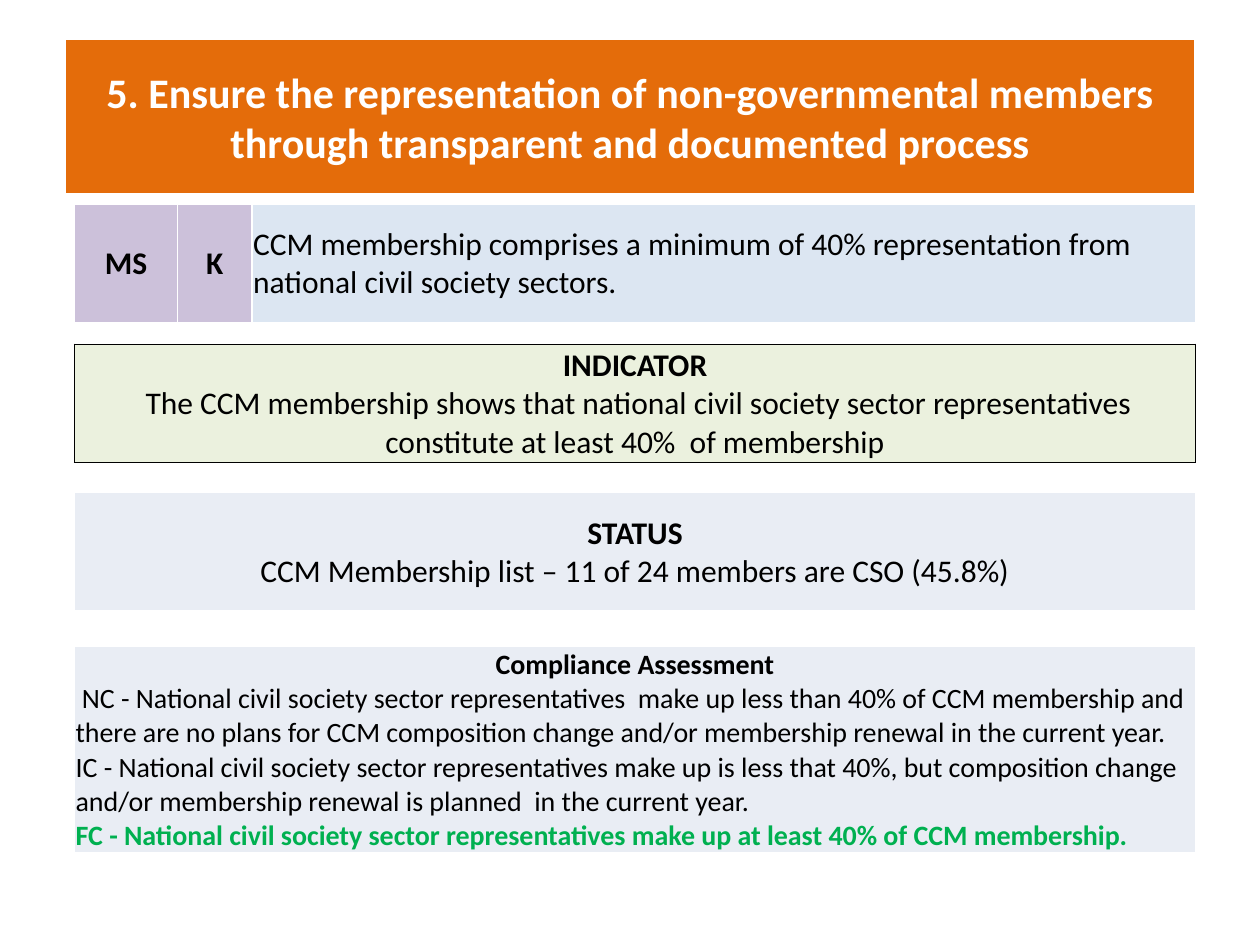
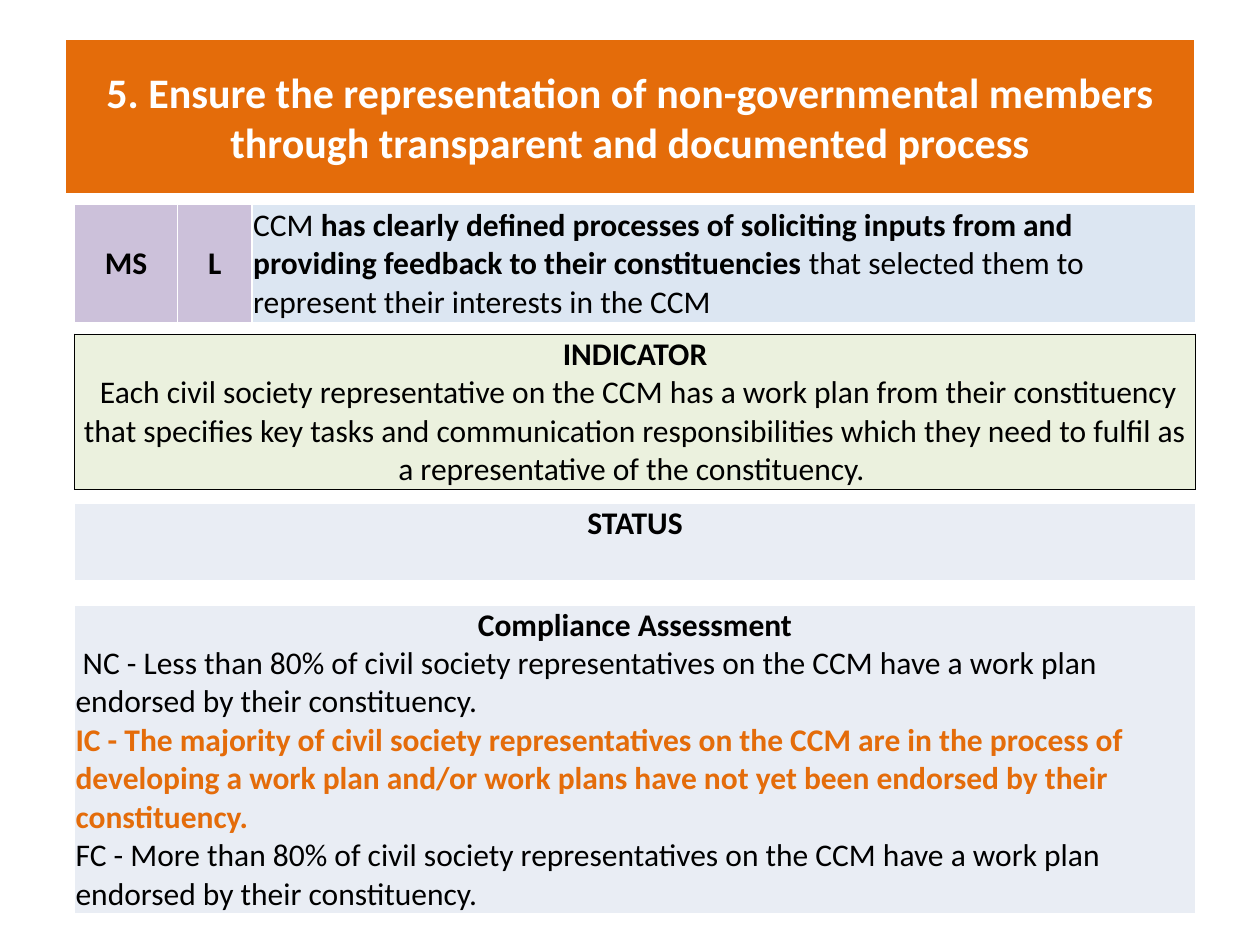
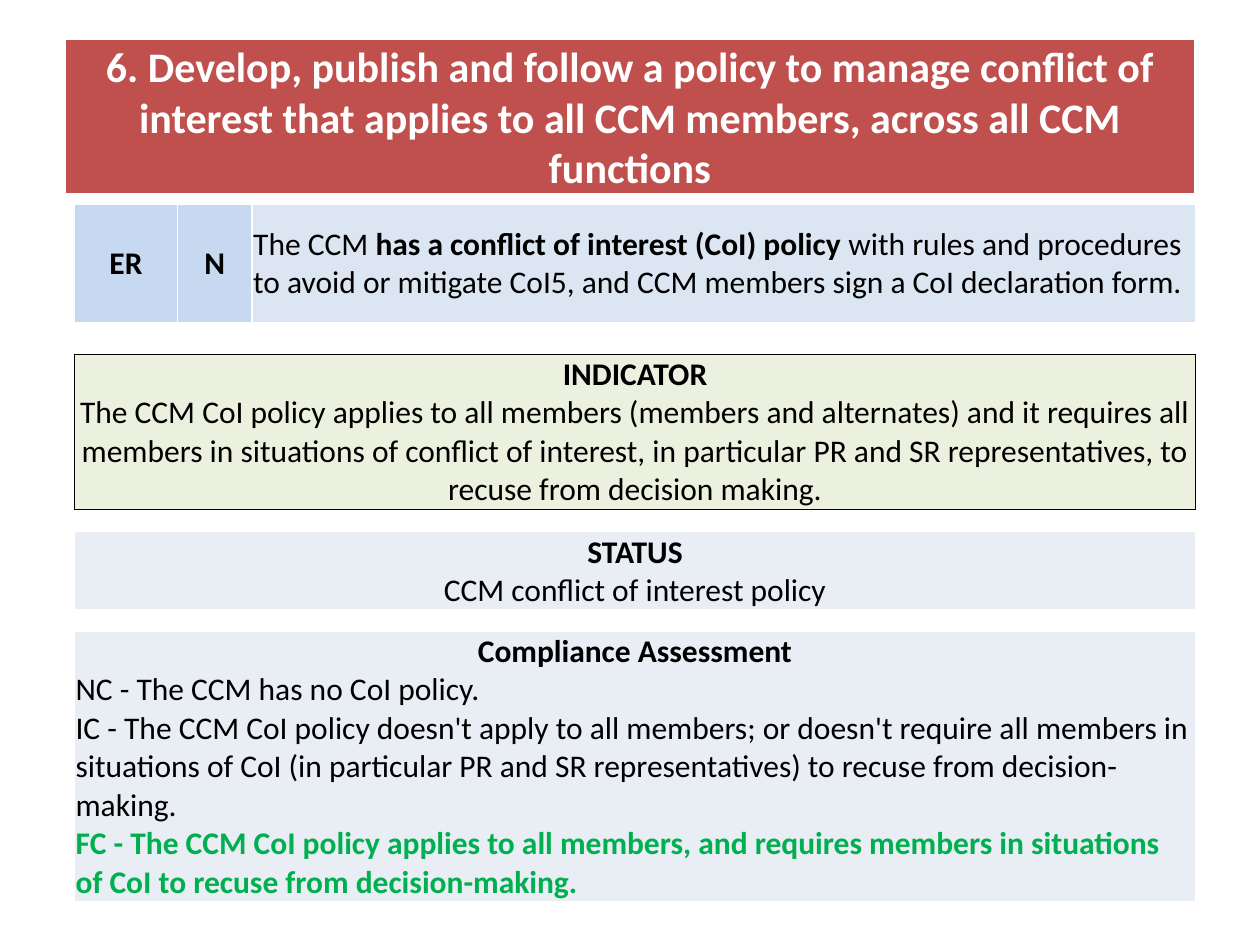
import dataclasses

import lxml.etree
import pptx
import pptx.dml.color
import pptx.enum.text
import pptx.oxml.ns
import pptx.util

ALIGN = pptx.enum.text.PP_ALIGN
ANCHOR = pptx.enum.text.MSO_ANCHOR
SCALE = 9144
LEFT, WIDTH = 59, 890
TAG_TOP, TAG_HIGH = 162, 94
TAG_COLS = (82, 59, WIDTH - 82 - 59)


@dataclasses.dataclass(frozen=True)
class Theme:
    font: str = "Calibri"
    head: int = 24
    body: int = 18
    small: int = 16
    white: str = "FFFFFF"
    black: str = "000000"
    orange: str = "E46C0A"
    red: str = "C0504D"
    green: str = "00B050"
    mauve: str = "CCC1DA"
    sky: str = "C6D9F1"
    pale: str = "DCE6F2"
    lime: str = "EBF1DE"
    mist: str = "E9EDF4"


THEME = Theme()


def px(count):
    return pptx.util.Emu(count * SCALE)


def rgb(code):
    return pptx.dml.color.RGBColor.from_string(code)


def write(para, text, size=THEME.body, color=THEME.black, bold=False, align=None):
    if align is not None:
        para.alignment = align
    run = para.add_run()
    run.text = text
    run.font.name = THEME.font
    run.font.size = pptx.util.Pt(size)
    run.font.bold = bold
    run.font.color.rgb = rgb(color)


class Deck:
    def __init__(self, theme):
        self.theme = theme
        self.file = pptx.Presentation()
        self.file.slide_width = px(1000)
        self.file.slide_height = px(750)
        self.slide = None

    def start(self, text, fill):
        layout = self.file.slide_layouts.get_by_name("Title Only")
        self.slide = self.file.slides.add_slide(layout)
        self.title(text, fill)

    def title(self, text, fill):
        box = self.slide.shapes.title
        box.left, box.top, box.width, box.height = map(px, (51, 30, 898, 125))
        box.fill.solid()
        box.fill.fore_color.rgb = rgb(fill)
        box.line.color.rgb = rgb(self.theme.white)
        box.line.width = pptx.util.Pt(2)
        frame = box.text_frame
        frame.word_wrap = True
        frame.auto_size = pptx.enum.text.MSO_AUTO_SIZE.NONE
        frame.vertical_anchor = ANCHOR.MIDDLE
        write(frame.paragraphs[0], text, size=self.theme.head,
              color=self.theme.white, bold=True, align=ALIGN.CENTER)

    def border(self, cell, color, points):
        props = cell._tc.get_or_add_tcPr()
        for side in ("a:lnL", "a:lnR", "a:lnT", "a:lnB"):
            line = lxml.etree.SubElement(props, pptx.oxml.ns.qn(side),
                                         w=str(pptx.util.Pt(points)))
            fill = lxml.etree.SubElement(line, pptx.oxml.ns.qn("a:solidFill"))
            lxml.etree.SubElement(fill, pptx.oxml.ns.qn("a:srgbClr"), val=color)

    def cell(self, cell, paras, fill, edge, anchor):
        self.border(cell, *edge)
        cell.fill.solid()
        cell.fill.fore_color.rgb = rgb(fill)
        cell.margin_left = cell.margin_right = cell.margin_top = px(1)
        cell.margin_bottom = 0
        cell.vertical_anchor = anchor
        frame = cell.text_frame
        for index, runs in enumerate(paras):
            para = frame.add_paragraph() if index else frame.paragraphs[0]
            for text, style in runs:
                write(para, text, **style)

    def table(self, top, high, cells, fills, cols=(WIDTH,), edge=None,
              anchor=ANCHOR.MIDDLE):
        shape = self.slide.shapes.add_table(
            1, len(cols), px(LEFT), px(top), px(WIDTH), px(high))
        grid = shape.table
        grid.first_row = grid.horz_banding = False
        grid.rows[0].height = px(high)
        for index, wide in enumerate(cols):
            grid.columns[index].width = px(wide)
            self.cell(grid.cell(0, index), cells[index], fills[index],
                      edge or (self.theme.white, 1), anchor)

    def tags(self, kind, mark, runs, fill):
        bold = dict(bold=True, align=ALIGN.CENTER)
        rule = [(text, dict(bold=strong)) for text, strong in runs]
        self.table(TAG_TOP, TAG_HIGH,
                   [[[(kind, bold)]], [[(mark, bold)]], [rule]],
                   (fill, fill, self.theme.pale), TAG_COLS)

    def panel(self, top, high, head, text, fill, **look):
        paras = [[(head, dict(bold=True, align=ALIGN.CENTER))]]
        if text:
            paras.append([(text, dict(align=ALIGN.CENTER))])
        self.table(top, high, [paras], (fill,), **look)

    def needs(self, top, high, text):
        self.panel(top, high, "INDICATOR", text, self.theme.lime,
                   edge=(self.theme.black, 0.5))

    def status(self, top, high, text=""):
        self.panel(top, high, "STATUS", text, self.theme.mist,
                   anchor=ANCHOR.MIDDLE if text else ANCHOR.TOP)

    def grades(self, top, high, lines, met, color, size=THEME.body):
        paras = [[("Compliance Assessment",
                   dict(size=size, bold=True, align=ALIGN.CENTER))]]
        for line in lines:
            hit = line.startswith(met)
            tone = color if hit else self.theme.black
            paras.append([(line, dict(size=size, color=tone, bold=hit))])
        self.table(top, high, [paras], (self.theme.mist,))


def main():
    deck = Deck(THEME)
    voice = ("5. Ensure the representation of non-governmental members "
             "through transparent and documented process")

    deck.start(voice, THEME.orange)
    deck.tags("MS", "K", [
        ("CCM membership comprises a minimum of 40% representation from "
         "national civil society sectors.", False)], THEME.mauve)
    deck.needs(273, 94,
               " The CCM membership shows that national civil society sector "
               "representatives constitute at least 40%  of membership")
    deck.status(391, 94, "CCM Membership list – 11 of 24 members are CSO (45.8%)")
    deck.grades(513, 161, [
        " NC - National civil society sector representatives  make up less "
        "than 40% of CCM membership and there are no plans for CCM composition "
        "change and/or membership renewal in the current year.",
        "IC - National civil society sector representatives make up is less "
        "that 40%, but composition change and/or membership renewal is "
        "planned  in the current year.",
        "FC - National civil society sector representatives make up at least "
        "40% of CCM membership.",
    ], "FC", THEME.green, size=THEME.small)

    deck.start(voice, THEME.orange)
    deck.tags("MS", "L", [
        ("CCM ", False),
        ("has clearly defined processes of soliciting inputs from and "
         "providing feedback to their constituencies", True),
        (" that selected them to represent their interests in the CCM", False),
    ], THEME.mauve)
    deck.needs(265, 121,
               " Each civil society representative on the CCM has a work plan "
               "from their constituency that specifies key tasks and "
               "communication responsibilities which they need to fulfil as a "
               "representative of the constituency. ")
    deck.status(399, 62)
    deck.grades(480, 241, [
        " NC - Less than 80% of civil society representatives on the CCM have "
        "a work plan endorsed by their constituency.",
        "IC - The majority of civil society representatives on the CCM are in "
        "the process of developing a work plan and/or work plans have not yet "
        "been endorsed by their constituency.",
        "FC - More than 80% of civil society representatives on the CCM have "
        "a work plan endorsed by their constituency.",
    ], "IC", THEME.orange)

    deck.start("6. Develop, publish and follow a policy to manage conflict of "
               "interest that applies to all CCM members, across all CCM "
               "functions", THEME.red)
    deck.tags("ER", "N", [
        ("The CCM ", False),
        ("has a conflict of interest (CoI) policy ", True),
        ("with rules and procedures to avoid or mitigate CoI5, and CCM "
         "members sign a CoI declaration form.", False),
    ], THEME.sky)
    deck.needs(281, 121,
               "The CCM CoI policy applies to all members (members and "
               "alternates) and it requires all members in situations of "
               "conflict of interest, in particular PR and SR "
               "representatives, to recuse from decision making.")
    deck.status(422, 62, "CCM conflict of interest policy")
    deck.grades(501, 211, [
        "NC - The CCM has no CoI policy.",
        "IC - The CCM CoI policy doesn't apply to all members; or doesn't "
        "require all members in situations of CoI (in particular PR and SR "
        "representatives) to recuse from decision-making.",
        "FC - The CCM CoI policy applies to all members, and requires members "
        "in situations of CoI to recuse from decision-making.",
    ], "FC", THEME.green)

    deck.file.save("out.pptx")


if __name__ == "__main__":
    main()
